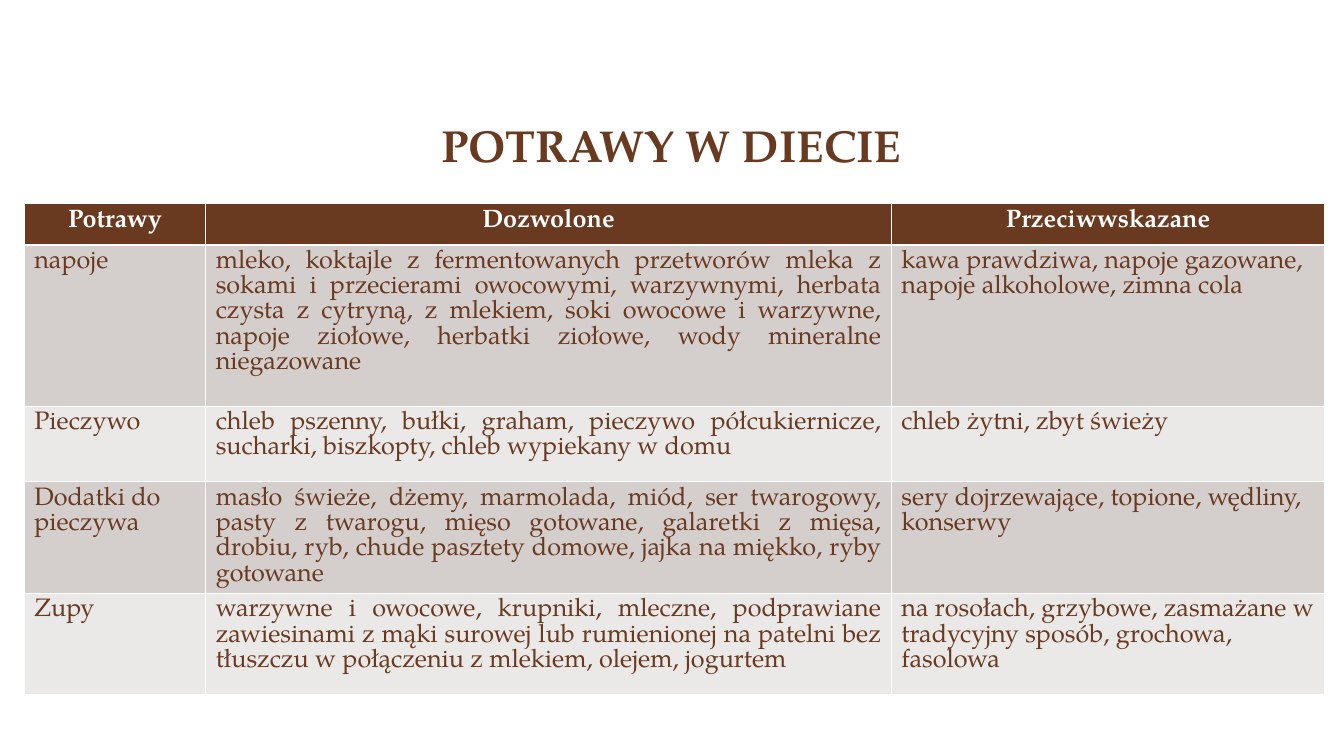
"""Build the slide with the table of dishes allowed and advised against in a diet."""
from pptx import Presentation
from pptx.dml.color import RGBColor
from pptx.enum.text import MSO_ANCHOR, PP_ALIGN
from pptx.util import Pt

PX = 9144
FONT = "TeX Gyre Pagella"
BROWN = RGBColor(0x6A, 0x3A, 0x20)
WHITE = RGBColor(0xFF, 0xFF, 0xFF)
BANDS = [RGBColor(0xEB, 0xE8, 0xE8), RGBColor(0xD4, 0xCE, 0xCD)]
LEFT, CENTER, JUSTIFY = PP_ALIGN.LEFT, PP_ALIGN.CENTER, PP_ALIGN.JUSTIFY
BOTTOM = MSO_ANCHOR.BOTTOM

COLUMN_WIDTHS = [180, 680, 430]
ROW_HEIGHTS = [41, 160, 75, 101, 100]
DISHES = [
    ("Potrawy", "Dozwolone", "Przeciwwskazane"),
    ("napoje",
     "mleko, koktajle z fermentowanych przetworów mleka z sokami i przecierami "
     "owocowymi, warzywnymi, herbata czysta z cytryną, z mlekiem, soki owocowe i "
     "warzywne, napoje ziołowe, herbatki ziołowe, wody mineralne niegazowane",
     "kawa prawdziwa, napoje gazowane, napoje alkoholowe, zimna cola"),
    ("Pieczywo",
     "chleb pszenny, bułki, graham, pieczywo półcukiernicze, sucharki, biszkopty, "
     "chleb wypiekany w domu",
     "chleb żytni, zbyt świeży"),
    ("Dodatki do pieczywa",
     "masło świeże, dżemy, marmolada, miód, ser twarogowy, pasty z twarogu, mięso "
     "gotowane, galaretki z mięsa, drobiu, ryb, chude pasztety domowe, jajka na "
     "miękko, ryby gotowane",
     "sery dojrzewające, topione, wędliny, konserwy"),
    ("Zupy",
     "warzywne i owocowe, krupniki, mleczne, podprawiane zawiesinami z mąki surowej "
     "lub rumienionej na patelni bez tłuszczu w połączeniu z mlekiem, olejem, jogurtem",
     "na rosołach, grzybowe, zasmażane w tradycyjny sposób, grochowa, fasolowa"),
]


def style_text(p, size, color, bold, align):
    p.alignment = align
    font = p.runs[0].font
    font.name, font.size, font.bold = FONT, Pt(size), bold
    font.color.rgb = color


prs = Presentation()
prs.slide_width, prs.slide_height = 1333 * PX, 750 * PX
s = prs.slides.add_slide(prs.slide_layouts[5])

title = s.shapes.title
title.left, title.top, title.width, title.height = 133 * PX, 47 * PX, 1066 * PX, 128 * PX
tf = title.text_frame
tf.text = "POTRAWY W DIECIE"
tf.vertical_anchor = BOTTOM
style_text(tf.paragraphs[0], 32, BROWN, True, CENTER)
tf.paragraphs[0].line_spacing = Pt(36)

table = s.shapes.add_table(
    len(DISHES), len(COLUMN_WIDTHS), 24 * PX, 202 * PX,
    sum(COLUMN_WIDTHS) * PX, sum(ROW_HEIGHTS) * PX).table
for column, width in zip(table.columns, COLUMN_WIDTHS):
    column.width = width * PX
for row, height in zip(table.rows, ROW_HEIGHTS):
    row.height = height * PX

for i, dishes in enumerate(DISHES):
    header = i == 0
    for j, text in enumerate(dishes):
        cell = table.cell(i, j)
        cell.fill.solid()
        cell.fill.fore_color.rgb = BROWN if header else BANDS[i % 2]
        cell.text_frame.text = text
        p = cell.text_frame.paragraphs[0]
        align = CENTER if header else JUSTIFY if j == 1 else LEFT
        style_text(p, 18, WHITE if header else BROWN, header, align)
        p.line_spacing = Pt(18.1)

prs.save("out.pptx")
